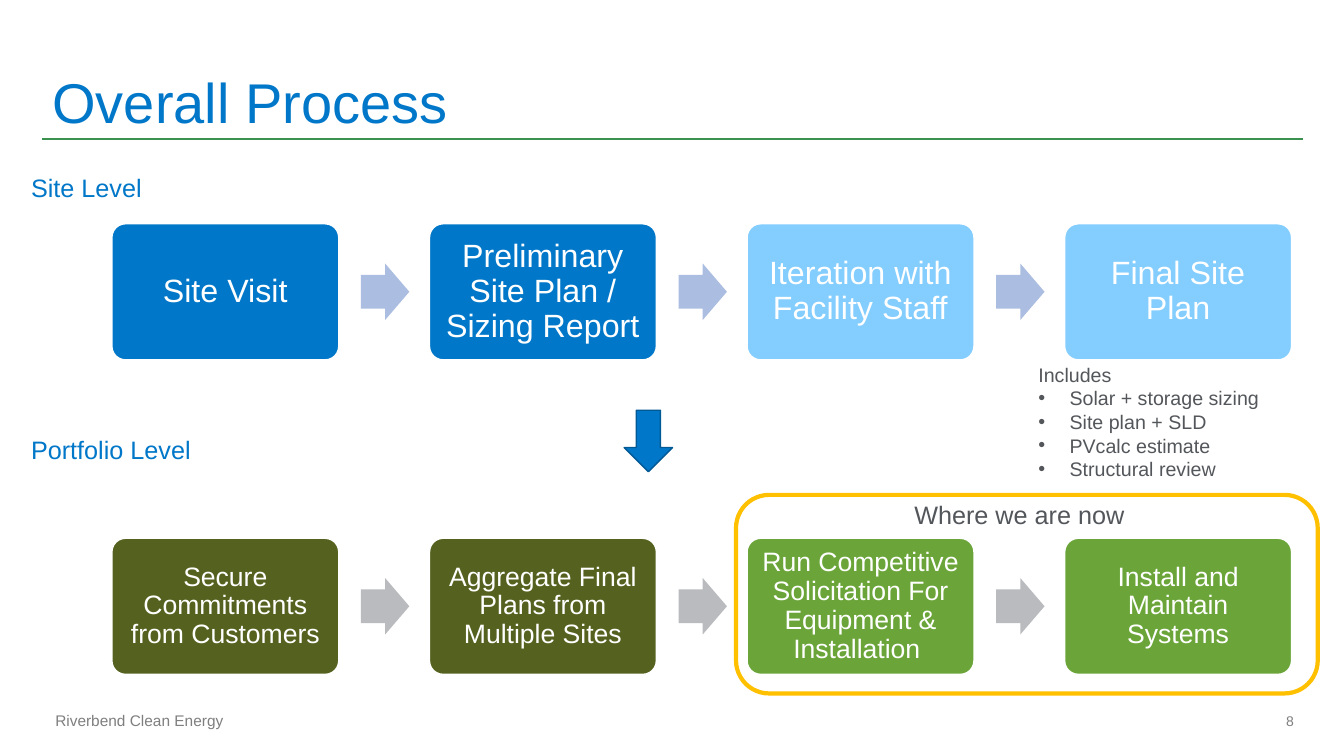
import pptx
import pptx.util
import pptx.dml.color
import pptx.enum.shapes
import pptx.enum.text
import pptx.oxml
import pptx.oxml.ns

Inches, Pt = pptx.util.Inches, pptx.util.Pt
SHAPES = pptx.enum.shapes.MSO_SHAPE
ALIGN = pptx.enum.text.PP_ALIGN
ANCHOR = pptx.enum.text.MSO_ANCHOR

COLORS = {
    "blue": "0077C8", "dark blue": "005894", "sky": "83CDFF", "lavender": "ABBDE0",
    "olive": "55621F", "green": "6BA539", "silver": "B9BBBE", "amber": "FFC000",
    "rule": "3A9150", "text": "53565A", "footer": "7F7F7F", "white": "FFFFFF",
}

# Grid of the two process rows
COLUMN_LEFT, COLUMN_PITCH = 1.11, 3.15
BOX_WIDTH, BOX_HEIGHT = 2.25, 1.35
ARROW_WIDTH, ARROW_HEIGHT, ARROW_OFFSET = 0.48, 0.56, 2.47


def rgb(name):
    return pptx.dml.color.RGBColor.from_string(COLORS[name])


def write(shape, text, size=18, color="text", align=ALIGN.LEFT, anchor=ANCHOR.TOP,
          spacing=None, inset=None, wrap=True):
    frame = shape.text_frame
    frame.word_wrap = wrap
    frame.auto_size = pptx.enum.text.MSO_AUTO_SIZE.NONE
    frame.vertical_anchor = anchor
    if inset is not None:
        frame.margin_left = frame.margin_right = Inches(inset)
        frame.margin_top = frame.margin_bottom = Inches(inset)
    frame.text = text
    for paragraph in frame.paragraphs:
        paragraph.alignment = align
        paragraph.line_spacing = spacing
        font = paragraph.runs[0].font
        font.name, font.size = "Arial", Pt(size)
        font.color.rgb = rgb(color)
    return frame


def draw(kind, left, top, width, height, fill=None, line=None, line_width=1):
    shape = slide.shapes.add_shape(
        kind, Inches(left), Inches(top), Inches(width), Inches(height))
    shape.shadow.inherit = False
    if fill:
        shape.fill.solid()
        shape.fill.fore_color.rgb = rgb(fill)
    else:
        shape.fill.background()
    if line:
        shape.line.color.rgb = rgb(line)
        shape.line.width = Pt(line_width)
    else:
        shape.line.fill.background()
    return shape


presentation = pptx.Presentation()
presentation.slide_width, presentation.slide_height = Inches(13.33), Inches(7.5)
slide = presentation.slides.add_slide(presentation.slide_layouts[5])

# Title and the rule below it
title = slide.shapes.title
title.left, title.top = Inches(0.42), Inches(0.35)
title.width, title.height = Inches(12.59), Inches(1.03)
write(title, "Overall Process", size=40, color="blue", anchor=ANCHOR.BOTTOM, spacing=0.8)
rule = slide.shapes.add_connector(
    pptx.enum.shapes.MSO_CONNECTOR.STRAIGHT,
    Inches(0.42), Inches(1.38), Inches(12.92), Inches(1.38))
rule.line.color.rgb = rgb("rule")
rule.line.width = Pt(1)
rule._element.spPr.append(pptx.oxml.parse_xml(
    "<a:effectLst %s/>" % pptx.oxml.ns.nsdecls("a")))

# Process rows: top, text size, inset, arrow colour, steps with their fill
process_rows = [
    (2.22, 23, 0.1, "lavender", [
        ("Site Visit", "blue"),
        ("Preliminary Site Plan / Sizing Report", "blue"),
        ("Iteration with Facility Staff", "sky"),
        ("Final Site Plan", "sky")]),
    (5.34, 19, 0.08, "silver", [
        ("Secure Commitments from Customers", "olive"),
        ("Aggregate Final Plans from Multiple Sites", "olive"),
        ("Run Competitive Solicitation For Equipment & Installation ", "green"),
        ("Install and Maintain Systems", "green")]),
]
for top, size, inset, arrow_color, steps in process_rows:
    for column, (step, fill) in enumerate(steps):
        left = COLUMN_LEFT + column * COLUMN_PITCH
        box = draw(SHAPES.ROUNDED_RECTANGLE, left, top, BOX_WIDTH, BOX_HEIGHT, fill,
                   line="white")
        box.adjustments[0] = 0.1
        write(box, step, size=size, color="white", align=ALIGN.CENTER,
              anchor=ANCHOR.MIDDLE, spacing=0.9, inset=inset)
        if column < len(steps) - 1:
            arrow = draw(SHAPES.RIGHT_ARROW, left + ARROW_OFFSET,
                         top + (BOX_HEIGHT - ARROW_HEIGHT) / 2,
                         ARROW_WIDTH, ARROW_HEIGHT, arrow_color)
            arrow.adjustments[0], arrow.adjustments[1] = 0.6, 0.5

# Arrow from the site level down to the portfolio level
draw(SHAPES.DOWN_ARROW, 6.19, 4.07, 0.48, 0.61, "blue", line="dark blue")

# Frame around the current steps
draw(SHAPES.ROUNDED_RECTANGLE, 7.3, 4.91, 5.77, 1.97, line="amber", line_width=3)

# Labels, footer and page number
labels = [
    ("Site Level", (0.21, 1.66, 1.78, 0.4), dict(color="blue")),
    ("Portfolio Level", (0.21, 4.26, 2.46, 0.4), dict(color="blue")),
    ("Where we are now", (8.97, 4.9, 2.46, 0.4), dict()),
    ("Riverbend Clean Energy", (0.45, 7.01, 1.86, 0.47),
     dict(size=11, color="footer", wrap=False)),
    ("8", (11.35, 6.95, 1.58, 0.4),
     dict(size=10, color="footer", align=ALIGN.RIGHT, anchor=ANCHOR.MIDDLE)),
]
for text, place, text_format in labels:
    label = slide.shapes.add_textbox(*map(Inches, place))
    write(label, text, **text_format)

# Contents of the final site plan
contents = ["Includes", "Solar + storage sizing", "Site plan + SLD",
            "PVcalc estimate", "Structural review"]
contents_box = slide.shapes.add_textbox(
    Inches(10.2), Inches(3.55), Inches(2.92), Inches(1.58))
contents_frame = write(contents_box, "\n".join(contents), size=14)
for paragraph in contents_frame.paragraphs[1:]:
    properties = paragraph._p.get_or_add_pPr()
    properties.set("marL", str(Inches(0.31)))
    properties.set("indent", str(-Inches(0.31)))
    properties.append(pptx.oxml.parse_xml(
        '<a:buFont %s typeface="Arial"/>' % pptx.oxml.ns.nsdecls("a")))
    properties.append(pptx.oxml.parse_xml(
        '<a:buChar %s char="•"/>' % pptx.oxml.ns.nsdecls("a")))

presentation.save("out.pptx")
